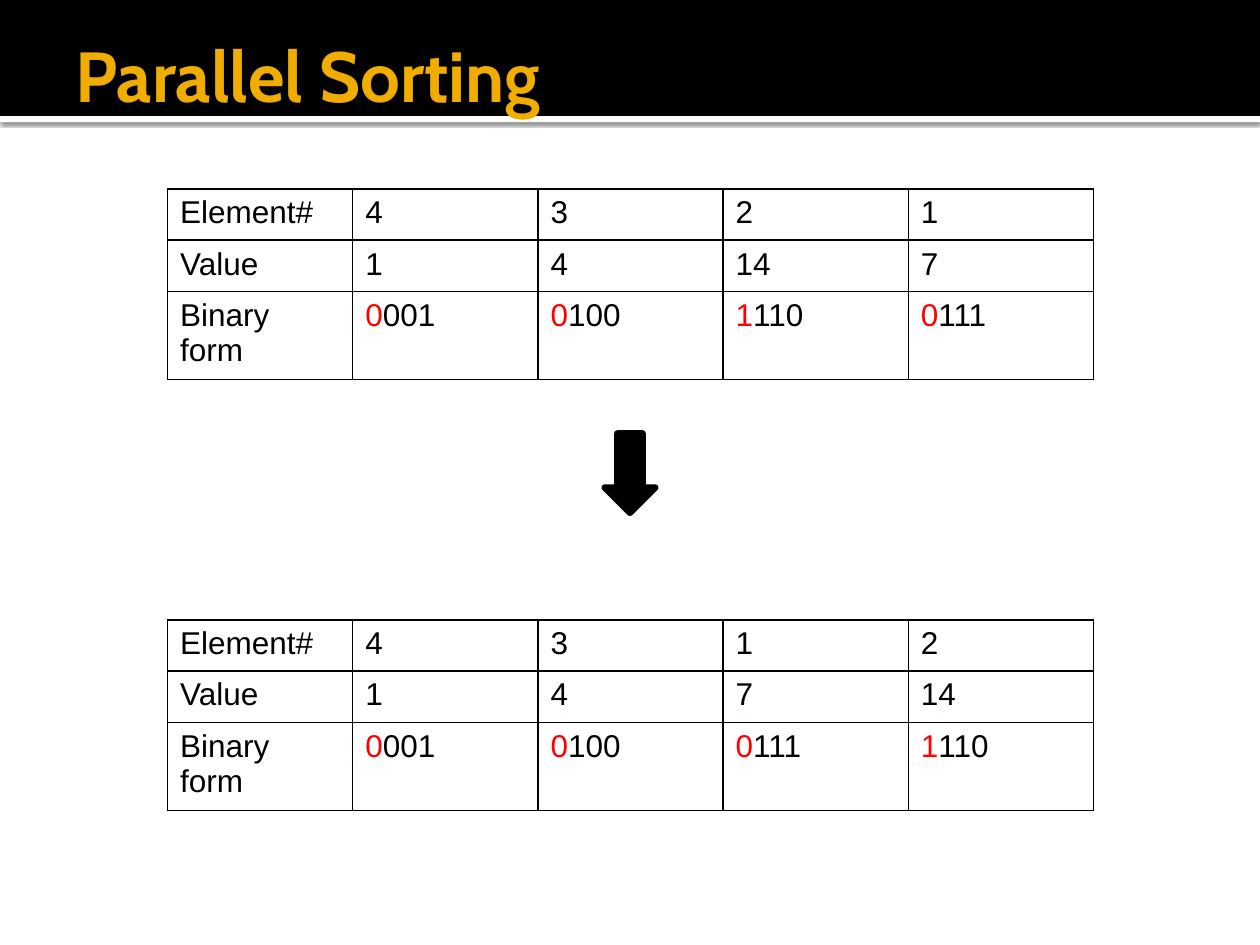
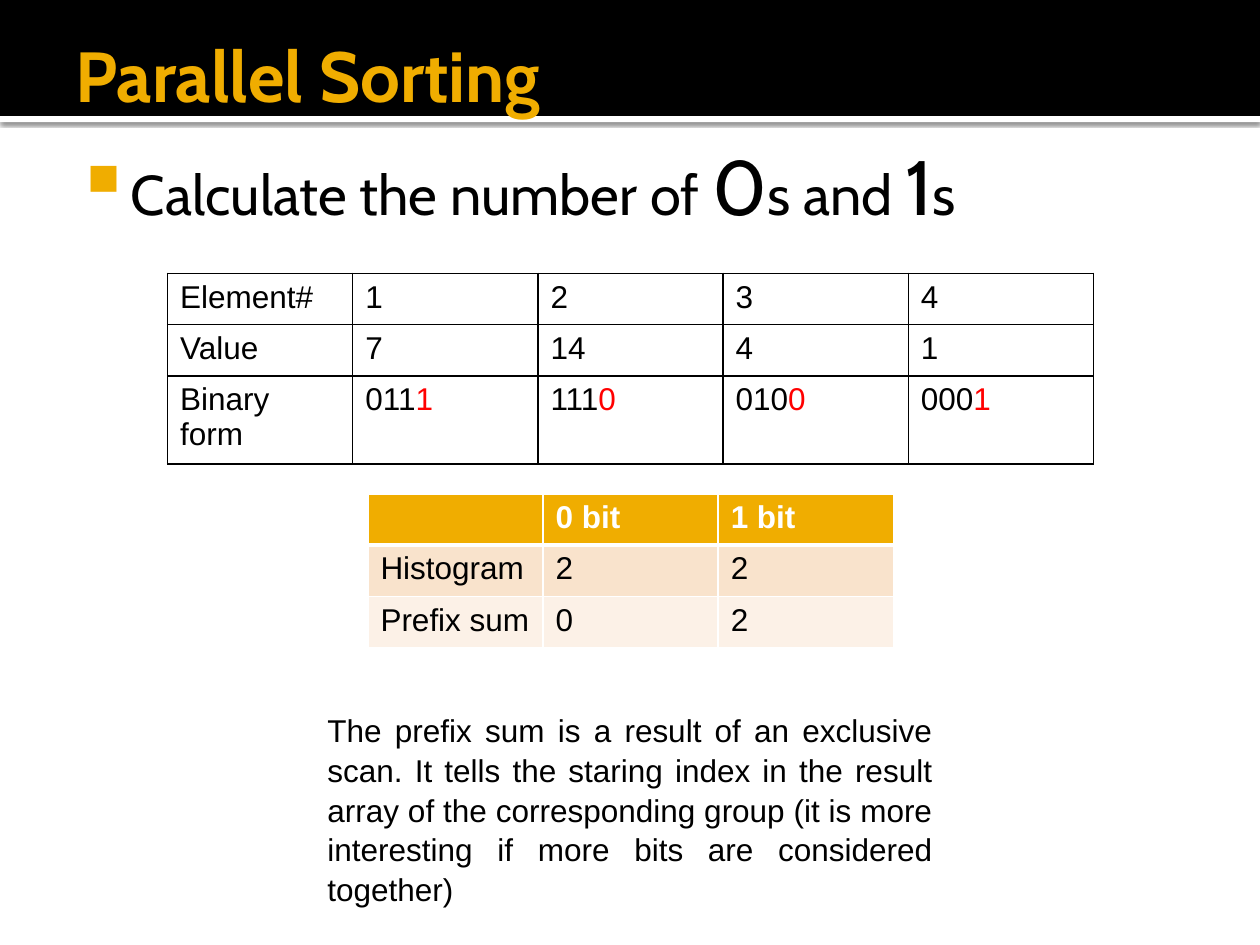
from dataclasses import dataclass
from typing import NamedTuple

from lxml.etree import SubElement
from pptx import Presentation
from pptx.dml.color import RGBColor as RGB
from pptx.enum.shapes import MSO_SHAPE as Shape
from pptx.enum.text import MSO_ANCHOR as Anchor, PP_ALIGN as Align
from pptx.oxml import parse_xml
from pptx.oxml.ns import nsdecls, qn
from pptx.util import Inches, Pt


@dataclass(frozen=True)
class Theme:
    black: str = "000000"
    white: str = "FFFFFF"
    gold: str = "F0AD00"
    red: str = "FF0000"
    peach: str = "F9E3CC"
    cream: str = "FCF1E7"
    heading_font: str = "Cabin"
    text_font: str = "Arial"
    title_size: float = 40.5
    bullet_size: float = 32
    digit_size: float = 44
    text_size: float = 18


THEME = Theme()


class Box(NamedTuple):
    left: float
    top: float
    width: float
    height: float

    def emu(self) -> list:
        return [Inches(v) for v in self]


class Run(NamedTuple):
    text: str
    color: str = THEME.black
    size: float = THEME.text_size
    font: str = THEME.text_font
    bold: bool = False


class Cell(NamedTuple):
    runs: list
    fill: str | None = None
    border: str = THEME.black
    bottom: float = 1


@dataclass(frozen=True)
class SortTable:
    top: float
    elements: tuple
    values: tuple
    marked_bit: int

    def binary_runs(self, value: int) -> list:
        return [Run(bit, THEME.red if i == self.marked_bit else THEME.black)
                for i, bit in enumerate(f"{value:04b}")]

    def rows(self) -> list:
        return [
            [Cell([Run(str(t))]) for t in ("Element#", *self.elements)],
            [Cell([Run(str(t))]) for t in ("Value", *self.values)],
            [Cell([Run("Binary form")])]
            + [Cell(self.binary_runs(v)) for v in self.values],
        ]


def add_runs(p, runs: list) -> None:
    for run in runs:
        r = p.add_run()
        r.text = run.text
        fmt = {"size": Pt(run.size), "name": run.font, "bold": run.bold}
        for name, value in fmt.items():
            setattr(r.font, name, value)
        r.font.color.rgb = RGB.from_string(run.color)


def add_text(s, box: Box, runs: list, **fmt):
    tf = s.shapes.add_textbox(*box.emu()).text_frame
    for name, value in {"word_wrap": True, **fmt}.items():
        setattr(tf, name, value)
    p = tf.paragraphs[0]
    add_runs(p, runs)
    return p


def add_block(s, kind: Shape, box: Box, color: str, line: float = 0):
    sp = s.shapes.add_shape(kind, *box.emu())
    sp.shadow.inherit = False
    sp.fill.solid()
    sp.fill.fore_color.rgb = RGB.from_string(color)
    if line:
        sp.line.color.rgb = RGB.from_string(color)
        sp.line.width = Pt(line)
    else:
        sp.line.fill.background()
    return sp


def add_shadow(sp) -> None:
    effects = sp._element.spPr.find(qn("a:effectLst"))
    effects.append(parse_xml(
        f'<a:outerShdw {nsdecls("a")} blurRad="{Pt(2.5)}" dist="{Pt(0.8)}" '
        f'dir="5400000" algn="t" rotWithShape="0"><a:srgbClr val="{THEME.black}">'
        '<a:alpha val="60000"/></a:srgbClr></a:outerShdw>'))


def add_bullet(p, char: str) -> None:
    pPr = p._p.get_or_add_pPr()
    pPr.set("marL", str(Inches(0.48)))
    pPr.set("indent", str(Inches(-0.35)))
    color = SubElement(pPr, qn("a:buClr"))
    SubElement(color, qn("a:srgbClr"), val=THEME.gold)
    SubElement(pPr, qn("a:buSzPct"), val="80000")
    SubElement(pPr, qn("a:buChar"), char=char)


def add_borders(cell, color: str, bottom: float) -> None:
    tcPr = cell._tc.get_or_add_tcPr()
    for side, width in {"L": 1, "R": 1, "T": 1, "B": bottom}.items():
        ln = SubElement(tcPr, qn(f"a:ln{side}"), w=str(Pt(width)))
        fill = SubElement(ln, qn("a:solidFill"))
        SubElement(fill, qn("a:srgbClr"), val=color)


def add_grid(s, box: Box, rows: list) -> None:
    shape = s.shapes.add_table(len(rows), len(rows[0]), *box.emu())
    table = shape.table
    table.first_row = table.horz_banding = False
    for i, row in enumerate(rows):
        for j, content in enumerate(row):
            cell = table.cell(i, j)
            add_borders(cell, content.border, content.bottom)
            if content.fill:
                cell.fill.solid()
                cell.fill.fore_color.rgb = RGB.from_string(content.fill)
            else:
                cell.fill.background()
            add_runs(cell.text_frame.paragraphs[0], content.runs)


def add_sort_table(s, table: SortTable) -> None:
    add_grid(s, Box(1.33, table.top, 7.35, 1.22), table.rows())


def add_titled_slide(prs, title: str):
    s = prs.slides.add_slide(prs.slide_layouts[6])
    add_shadow(add_block(s, Shape.RECTANGLE, Box(0, 0.92, 10, 0.05), THEME.white))
    add_block(s, Shape.RECTANGLE, Box(0, 0, 10, 0.92), THEME.black)
    add_text(s, Box(0.5, 0.17, 9, 0.83),
             [Run(title, THEME.gold, THEME.title_size, THEME.heading_font, True)],
             vertical_anchor=Anchor.MIDDLE, margin_right=Inches(0.05))
    return s


def build_sorted_slide(prs) -> None:
    s = add_titled_slide(prs, "Parallel Sorting")
    add_block(s, Shape.DOWN_ARROW, Box(4.8, 3.44, 0.4, 0.63), THEME.black, 3.78)
    add_sort_table(s, SortTable(1.5, (4, 3, 2, 1), (1, 4, 14, 7), 0))
    add_sort_table(s, SortTable(4.92, (4, 3, 1, 2), (1, 4, 7, 14), 0))


def build_count_slide(prs) -> None:
    s = add_titled_slide(prs, "Parallel Sorting")
    pieces = [("Calculate the number of ", THEME.bullet_size), ("0", THEME.digit_size),
              ("s and ", THEME.bullet_size), ("1", THEME.digit_size),
              ("s", THEME.bullet_size)]
    p = add_text(s, Box(0.5, 1, 9, 6),
                 [Run(t, size=size, font=THEME.heading_font) for t, size in pieces],
                 margin_left=Inches(0.06), margin_top=Inches(0.1))
    add_bullet(p, "■")
    add_sort_table(s, SortTable(2.17, (1, 2, 3, 4), (7, 14, 4, 1), 3))

    header = [Cell([Run(t, THEME.white, bold=True)] if t else [],
                   THEME.gold, THEME.white, 3) for t in ("", "0 bit", "1 bit")]
    counts = [(("Histogram", "2", "2"), THEME.peach),
              (("Prefix sum", "0", "2"), THEME.cream)]
    body = [[Cell([Run(t)], fill, THEME.white) for t in texts]
            for texts, fill in counts]
    add_grid(s, Box(2.92, 3.92, 4.17, 1.22), [header, *body])

    p = add_text(s, Box(2.5, 5.58, 5, 1.62), [Run(
        "The prefix sum is a result of an exclusive scan. It tells the staring index "
        "in the result array of the corresponding group (it is more interesting if "
        "more bits are considered together)")])
    p.alignment = Align.JUSTIFY
    p.line_spacing = 1.05


def main() -> None:
    prs = Presentation()
    prs.slide_width, prs.slide_height = Inches(10), Inches(7.5)
    build_sorted_slide(prs)
    build_count_slide(prs)
    prs.save("out.pptx")


if __name__ == "__main__":
    main()
